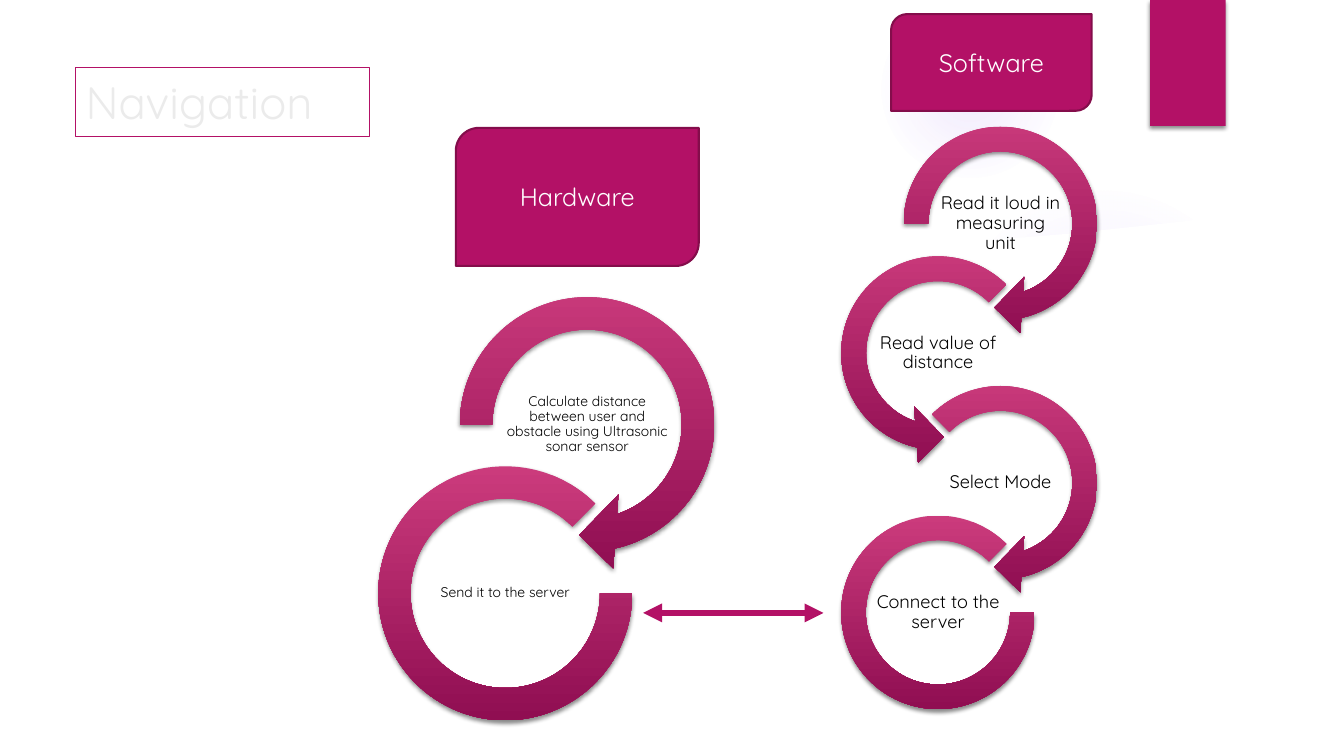
from pptx import Presentation
from pptx.dml.color import RGBColor
from pptx.enum.shapes import MSO_CONNECTOR, MSO_SHAPE
from pptx.enum.text import MSO_ANCHOR, MSO_AUTO_SIZE, PP_ALIGN
from pptx.oxml import parse_xml
from pptx.oxml.ns import nsdecls, qn
from pptx.oxml.xmlchemy import OxmlElement
from pptx.util import Pt

PINK, WHITE = "B31166", "FFFFFF"
rgb = RGBColor.from_string


def write(shape, text, size=18, color="000000", align=PP_ALIGN.CENTER,
          inset=7.2, space=1.0):
    frame = shape.text_frame
    frame.word_wrap = True
    frame.auto_size = MSO_AUTO_SIZE.NONE
    frame.vertical_anchor = MSO_ANCHOR.MIDDLE
    frame.margin_left = frame.margin_right = Pt(inset)
    frame.margin_top = frame.margin_bottom = Pt(min(inset, 3.6))
    frame.text = text
    para = frame.paragraphs[0]
    para.alignment = align
    para.line_spacing = space
    para.font.size = Pt(size)
    para.font.name = "Quicksand"
    para.font.color.rgb = rgb(color)


def draw(kind, left, top, width, height, fill=None, line=None, weight=1.5):
    shape = shapes.add_shape(kind, Pt(left), Pt(top), Pt(width), Pt(height))
    shape.shadow.inherit = False
    if fill:
        shape.fill.solid()
        shape.fill.fore_color.rgb = rgb(fill)
    if line:
        shape.line.color.rgb = rgb(line)
        shape.line.width = Pt(weight)
    else:
        shape.line.fill.background()
    return shape


prs = Presentation()
prs.slide_width, prs.slide_height = Pt(960), Pt(540)
slide = prs.slides.add_slide(prs.slide_layouts[5])
shapes = slide.shapes

title = shapes.title
title.left, title.top, title.width, title.height = Pt(54), Pt(48.2), Pt(210.2), Pt(49)
title.line.color.rgb = rgb(PINK)
title.line.width = Pt(0.75)
write(title, "Navigation", size=32.4, color="EBEBEB", align=PP_ALIGN.LEFT)

# Faint background glows: left, top, size, (position, opacity) stops
glows = [
    (677.5, 131.8, 221.8, [(0, 7), (36, 6), (69, 0)]),
    (630, 0.7, 126, [(0, 14), (36, 7), (73, 0)]),
]
for left, top, size, stops in glows:
    glow = draw(MSO_SHAPE.OVAL, left, top, size, size)
    marks = "".join(
        f'<a:gs pos="{pos}000"><a:srgbClr val="9B6BF2">'
        f'<a:alpha val="{alpha}000"/></a:srgbClr></a:gs>' for pos, alpha in stops)
    glow._element.spPr.find(qn("a:prstGeom")).addnext(parse_xml(
        f'<a:gradFill {nsdecls("a")}><a:gsLst>{marks}</a:gsLst><a:path path="circle">'
        '<a:fillToRect l="50000" t="50000" r="50000" b="50000"/></a:path></a:gradFill>'))

# White ground with a curved upper edge, and the white top margin
curve = [(686, 176), (763, 172), (803, 158.5), (844, 158.5), (884, 153), (924.5, 147)]
curve = [(604.8, 177.1), (683.3, 173.5), (763.2, 167), (843.8, 158.4), (924.5, 146.9)]
pen = shapes.build_freeform(Pt(curve[0][0]), Pt(curve[0][1]))
pen.add_line_segments(
    [(Pt(x), Pt(y)) for x, y in curve[1:] + [(924.5, 504), (604.8, 504)]])
ground = pen.convert_to_shape()
ground.shadow.inherit = False
ground.fill.solid()
ground.fill.fore_color.rgb = rgb(WHITE)
ground.line.fill.background()
draw(MSO_SHAPE.RECTANGLE, 0, 0, 960, 37.4, fill=WHITE)

cast = [draw(MSO_SHAPE.RECTANGLE, 821.5, 0, 54, 90, fill=PINK)]

# Each chain: first centre, step down, shift left, arrow size, arc size, label box, type size
RIGHT, LEFT, ARC = MSO_SHAPE.CIRCULAR_ARROW, MSO_SHAPE.LEFT_CIRCULAR_ARROW, MSO_SHAPE.BLOCK_ARC
chains = [
    (419.4, 303.1, 120.7, 58.5, 211.3, 181.4, (118, 59), 10, [
        ("Calculate distance between user and obstacle using Ultrasonic sonar sensor",
         RIGHT, (45, 108)),
        ("Send it to the server", ARC, None)]),
    (714.6, 159.6, 92.6, 44.6, 160.6, 138.2, (90, 44.6), 13, [
        ("Read it loud in measuring unit", RIGHT, (45, 108)),
        ("Read value of distance", LEFT, (63, 189)),
        ("Select Mode", RIGHT, (45, 135)),
        ("Connect to the server", ARC, None)]),
]
for x, y, step, shift, wide, small, box, size, links in chains:
    for i, (text, kind, turn) in enumerate(links):
        cx, cy = x - shift * (i % 2), y + step * i
        span = wide if turn else small
        loop = draw(kind, cx - span / 2, cy - span / 2, span, span)
        bends = (0.11, 11.423, *turn, 0.125) if turn else (0, 189, 0.127)
        for k, bend in enumerate(bends):
            loop.adjustments[k] = bend
        loop.fill.gradient()
        loop.fill.gradient_angle = 270
        for stop, color in zip(loop.fill.gradient_stops, ("CB3B7C", "900E52")):
            stop.color.rgb = rgb(color)
        cast.append(loop)
        label = shapes.add_textbox(
            Pt(cx - box[0] / 2), Pt(cy - box[1] / 2), Pt(box[0]), Pt(box[1]))
        write(label, text, size=size, inset=0.7, space=0.9)

for shape in cast:
    shape._element.spPr.find(qn("a:effectLst")).append(parse_xml(
        f'<a:outerShdw {nsdecls("a")} blurRad="{Pt(3)}" dist="{Pt(2)}" dir="5400000" '
        'rotWithShape="0"><a:srgbClr val="000000"><a:alpha val="45000"/></a:srgbClr>'
        '</a:outerShdw>'))

heads = [("Hardware", 325.6, 91.4, 173.5, 98.6), ("Software", 636.5, 10.1, 143.3, 69.1)]
for text, *place in heads:
    head = draw(MSO_SHAPE.ROUND_2_DIAG_RECTANGLE, *place, fill=PINK, line="840D4B")
    write(head, text, color=WHITE)

link = shapes.add_connector(
    MSO_CONNECTOR.STRAIGHT, Pt(459.4), Pt(437.8), Pt(588.2), Pt(437.8))
link.line.color.rgb = rgb(PINK)
link.line.width = Pt(4.5)
for tag in ("a:headEnd", "a:tailEnd"):
    tip = OxmlElement(tag)
    tip.set("type", "triangle")
    link.line._get_or_add_ln().append(tip)
link._element.spPr.append(OxmlElement("a:effectLst"))

prs.save("out.pptx")
